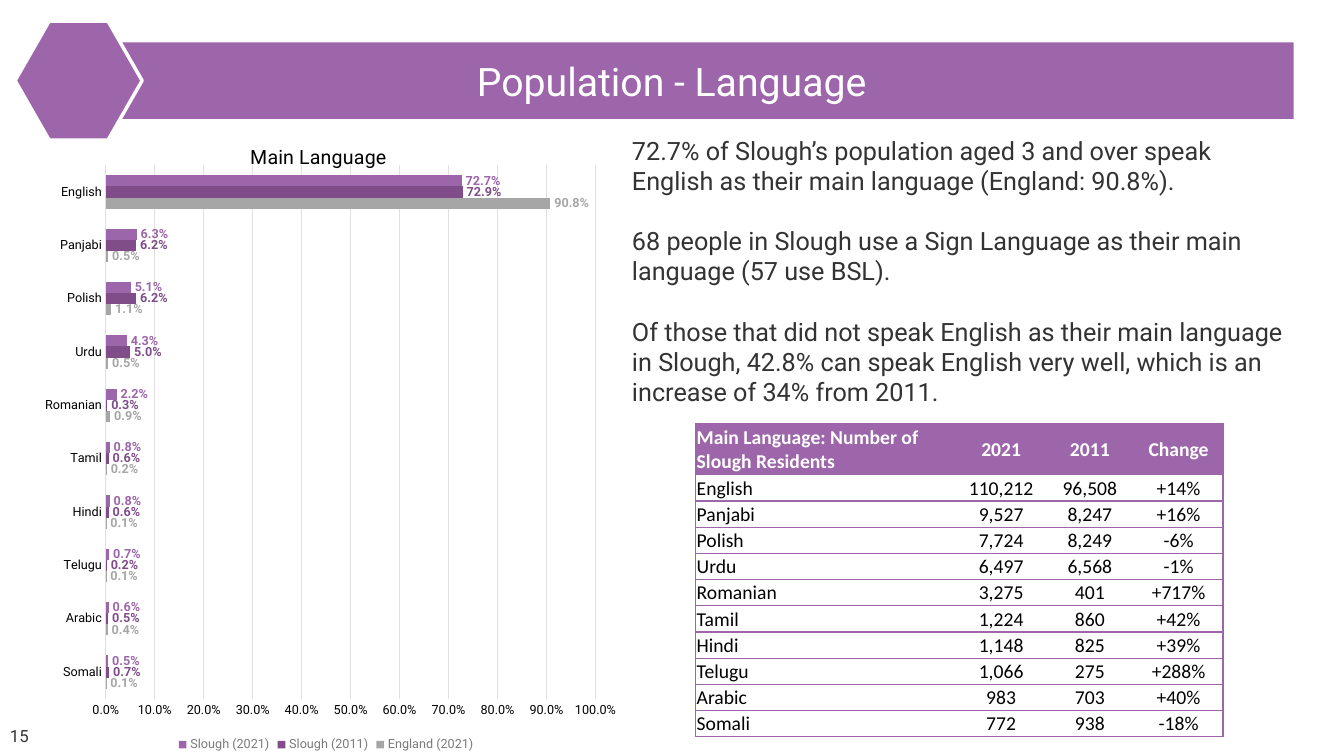
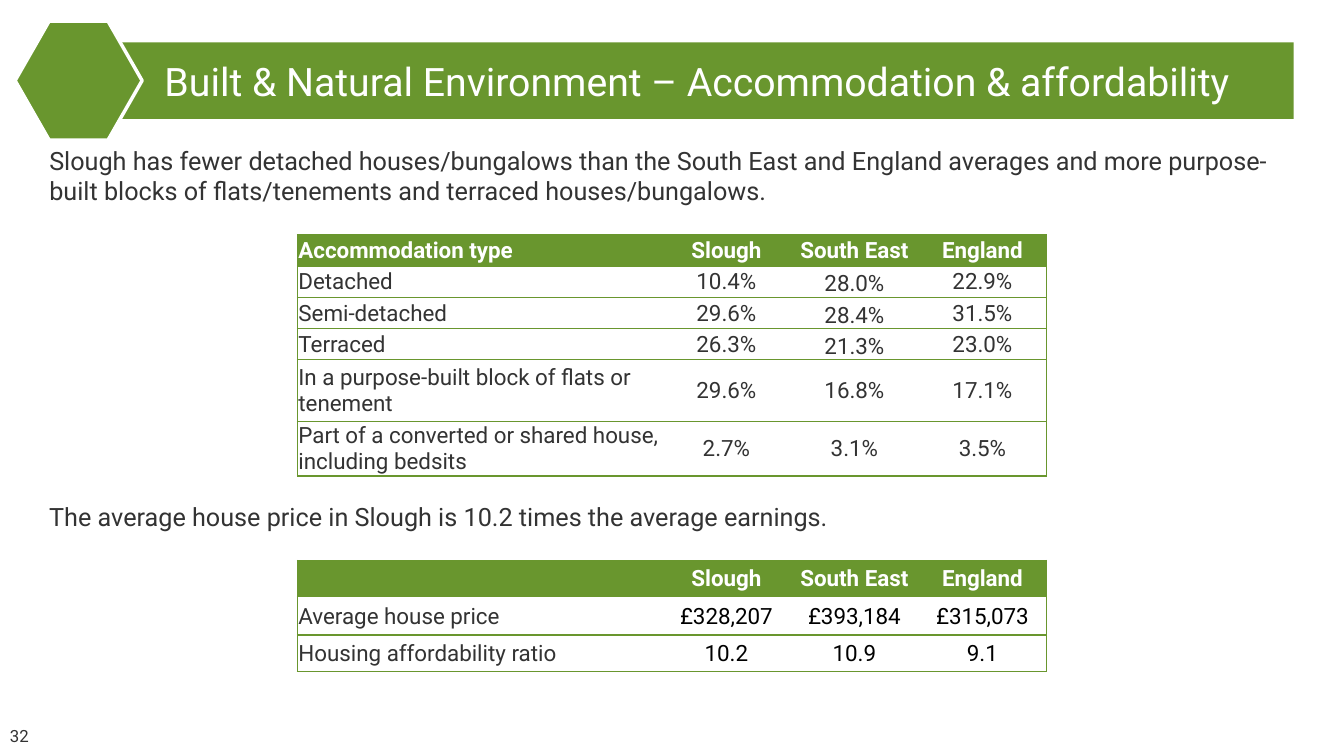
from pptx import Presentation
from pptx.chart.data import CategoryChartData
from pptx.dml.color import RGBColor
from pptx.enum import chart as charts, shapes, text
from pptx.oxml import parse_xml
from pptx.oxml.ns import nsdecls, qn
from pptx.util import Inches, Pt

PURPLE = RGBColor(0x9E, 0x66, 0xAA)
DARK_PURPLE = RGBColor(0x80, 0x4C, 0x8A)
GREEN = RGBColor(0x69, 0x96, 0x2E)
WHITE = RGBColor(0xFF, 0xFF, 0xFF)
BLACK = RGBColor(0, 0, 0)
INK = RGBColor(0x33, 0x33, 0x33)
LEGEND_GREY = RGBColor(0x7A, 0x7A, 0x7A)
BAR_GREY = RGBColor(0xA6, 0xA6, 0xA6)
GRID_GREY = RGBColor(0xE0, 0xE0, 0xE0)
FONT = "Roboto"
NO_STYLE = "{2D5ABB26-0587-4C30-8999-92F81FD0307C}"


def style(font, size, color, bold=False, name=FONT):
    font.name, font.size, font.bold = name, Pt(size), bold
    font.color.rgb = color


def add_grid(slide, box, widths, heights, rows, accent, font_name, size,
             label_color, value_color):
    table = slide.shapes.add_table(len(rows), len(widths), *map(Inches, box)).table
    table.horz_banding = table.first_row = False
    table._tbl.tblPr.find(qn("a:tableStyleId")).text = NO_STYLE
    for column, width in zip(table.columns, widths):
        column.width = Inches(width)
    for r, (values, height) in enumerate(zip(rows, heights)):
        table.rows[r].height = Inches(height)
        for c, value in enumerate(values):
            cell = table.cell(r, c)
            cell.margin_left = cell.margin_right = cell.margin_top = Inches(0.01)
            cell.margin_bottom = 0
            cell.vertical_anchor = text.MSO_ANCHOR.MIDDLE
            sides = "L" * (c == 0) + "R" * (c == len(widths) - 1) + "TB"
            for side in sides:
                cell._tc.get_or_add_tcPr().append(parse_xml(
                    f'<a:ln{side} {nsdecls("a")} w="12700"><a:solidFill>'
                    f'<a:srgbClr val="{accent}"/></a:solidFill></a:ln{side}>'))
            if r == 0:
                cell.fill.solid()
                cell.fill.fore_color.rgb = accent
            else:
                cell.fill.background()
            if value:
                paragraph = cell.text_frame.paragraphs[0]
                paragraph.alignment = text.PP_ALIGN.CENTER if c else text.PP_ALIGN.LEFT
                run = paragraph.add_run()
                run.text = value
                color = WHITE if r == 0 else value_color if c else label_color
                style(run.font, size, color, r == 0, font_name)
    return table


prs = Presentation()
prs.slide_width, prs.slide_height = Inches(13.33), Inches(7.5)

pages = [
    (PURPLE, 0.49, "Population - Language", "15", [
        ((6.17, 1.29, 6.7, 2.83), [
            "72.7% of Slough’s population aged 3 and over speak English as their main "
            "language (England: 90.8%).",
            "68 people in Slough use a Sign Language as their main language (57 use BSL).",
            "Of those that did not speak English as their main language in Slough, 42.8% "
            "can speak English very well, which is an increase of 34% from 2011."]),
    ]),
    (GREEN, 0.99, "Built & Natural Environment – Accommodation & affordability", "32", [
        ((0.39, 1.39, 12.45, 0.71), [
            "Slough has fewer detached houses/bungalows than the South East and England "
            "averages and more purpose-built blocks of flats/tenements and terraced "
            "houses/bungalows."]),
        ((0.39, 4.92, 12.34, 0.4), [
            "The average house price in Slough is 10.2 times the average earnings."]),
    ]),
]

slides = []
for accent, band_left, heading, number, passages in pages:
    slide = prs.slides.add_slide(prs.slide_layouts[5])
    slides.append(slide)

    band = slide.shapes.title
    band.left, band.top = Inches(band_left), Inches(0.42)
    band.width, band.height = Inches(12.83 - band_left), Inches(0.76)
    band.fill.solid()
    band.fill.fore_color.rgb = accent
    band.text_frame.auto_size = text.MSO_AUTO_SIZE.NONE
    band.text_frame.vertical_anchor = text.MSO_ANCHOR.MIDDLE
    paragraph = band.text_frame.paragraphs[0]
    paragraph.alignment = text.PP_ALIGN.CENTER
    run = paragraph.add_run()
    run.text = heading
    style(run.font, 28, WHITE)

    badge = slide.shapes.add_shape(shapes.MSO_SHAPE.HEXAGON, Inches(0.15), Inches(0.21),
                                   Inches(1.26), Inches(1.18))
    badge.shadow.inherit = False
    badge.adjustments[0] = 0.286
    badge.fill.solid()
    badge.fill.fore_color.rgb = accent
    badge.line.color.rgb = WHITE
    badge.line.width = Pt(2.5)

    page_number = ((0, 7.1, 3, 0.4), [number])
    for box, paragraphs in passages + [page_number]:
        is_number = paragraphs == [number]
        frame = slide.shapes.add_textbox(*map(Inches, box)).text_frame
        frame.word_wrap = True
        if is_number:
            frame.vertical_anchor = text.MSO_ANCHOR.MIDDLE
        for i, content in enumerate(paragraphs):
            paragraph = frame.add_paragraph() if i else frame.paragraphs[0]
            if i:
                paragraph.space_before = Pt(21.5)
            run = paragraph.add_run()
            run.text = content
            style(run.font, 12 if is_number else 18, INK)

language_slide, housing_slide = slides

languages = ["Somali", "Arabic", "Telugu", "Hindi", "Tamil", "Romanian", "Urdu",
             "Polish", "Panjabi", "English"]
shares = [
    ("England (2021)", BAR_GREY,
     [0.001, 0.004, 0.001, 0.001, 0.002, 0.009, 0.005, 0.011, 0.005, 0.908]),
    ("Slough (2011)", DARK_PURPLE,
     [0.007, 0.005, 0.002, 0.006, 0.006, 0.003, 0.05, 0.062, 0.062, 0.729]),
    ("Slough (2021)", PURPLE,
     [0.005, 0.006, 0.007, 0.008, 0.008, 0.022, 0.043, 0.051, 0.063, 0.727]),
]
share_data = CategoryChartData(number_format="0.0%")
share_data.categories = languages
for name, _, values in shares:
    share_data.add_series(name, values)
chart = language_slide.shapes.add_chart(
    charts.XL_CHART_TYPE.BAR_CLUSTERED, Inches(0.2), Inches(1.2), Inches(6.07),
    Inches(6.3), share_data).chart
style(chart.font, 10, INK)
chart_xml = chart._chartSpace.find(qn("c:chart"))
chart_xml.addnext(parse_xml(
    f'<c:spPr {nsdecls("c", "a")}><a:noFill/><a:ln><a:noFill/></a:ln></c:spPr>'))

chart.has_title = True
run = chart.chart_title.text_frame.paragraphs[0].add_run()
run.text = "Main Language"
style(run.font, 14, BLACK)

chart.has_legend = True
chart.legend.position = charts.XL_LEGEND_POSITION.BOTTOM
chart.legend.include_in_layout = False
style(chart.legend.font, 9, LEGEND_GREY)

plot = chart.plots[0]
plot.gap_width, plot.overlap = 182, 0
plot.vary_by_categories = False
for series, (_, color, _) in zip(plot.series, shares):
    series.format.fill.solid()
    series.format.fill.fore_color.rgb = color
    labels = series.data_labels
    labels.show_value = True
    labels.position = charts.XL_LABEL_POSITION.OUTSIDE_END
    labels.number_format = "0.0%"
    labels.number_format_is_linked = False
    style(labels.font, 9, color, True)

for axis in (chart.category_axis, chart.value_axis):
    axis.major_tick_mark = axis.minor_tick_mark = charts.XL_TICK_MARK.NONE
    style(axis.tick_labels.font, 9, BLACK)
chart.category_axis.format.line.color.rgb = GRID_GREY
chart.category_axis.format.line.width = Pt(0.75)
share_axis = chart.value_axis
share_axis.minimum_scale, share_axis.maximum_scale, share_axis.major_unit = 0, 1, 0.1
share_axis.format.line.fill.background()
share_axis.major_gridlines.format.line.color.rgb = GRID_GREY
share_axis.major_gridlines.format.line.width = Pt(0.75)
share_axis.tick_labels.number_format = "0.0%"
share_axis.tick_labels.number_format_is_linked = False

placements = [
    (chart_xml.find(qn("c:title")), 1, "", {"x": 0.37, "y": 0.03}),
    (chart_xml.find(qn("c:plotArea")), 0, '<c:layoutTarget val="inner"/>',
     {"x": 0.14, "y": 0.07, "w": 0.8, "h": 0.84}),
]
for part, position, target, edges in placements:
    for layout in part.findall(qn("c:layout")):
        part.remove(layout)
    sizes = "".join(f'<c:{edge} val="{value}"/>' for edge, value in edges.items())
    part.insert(position, parse_xml(
        f'<c:layout {nsdecls("c")}><c:manualLayout>{target}<c:xMode val="edge"/>'
        f'<c:yMode val="edge"/>{sizes}</c:manualLayout></c:layout>'))

residents = [
    ("Main Language: Number of Slough Residents", "2021", "2011", "Change"),
    ("English", "110,212", "96,508", "+14%"),
    ("Panjabi", "9,527", "8,247", "+16%"),
    ("Polish", "7,724", "8,249", "-6%"),
    ("Urdu", "6,497", "6,568", "-1%"),
    ("Romanian", "3,275", "401", "+717%"),
    ("Tamil", "1,224", "860", "+42%"),
    ("Hindi", "1,148", "825", "+39%"),
    ("Telugu", "1,066", "275", "+288%"),
    ("Arabic", "983", "703", "+40%"),
    ("Somali", "772", "938", "-18%"),
]
add_grid(language_slide, (6.9, 4.2, 5.23, 3.08), [2.59] + [0.88] * 3,
         [0.51] + [0.26] * 10, residents, PURPLE, "Calibri", 14, BLACK, BLACK)

areas = ("Slough", "South East", "England")
accommodation = [
    ("Accommodation type", *areas),
    ("Detached", "10.4%", "28.0%", "22.9%"),
    ("Semi-detached", "29.6%", "28.4%", "31.5%"),
    ("Terraced", "26.3%", "21.3%", "23.0%"),
    ("In a purpose-built block of flats or tenement", "29.6%", "16.8%", "17.1%"),
    ("Part of a converted or shared house, including bedsits", "2.7%", "3.1%", "3.5%"),
]
affordability = [
    ("", *areas),
    ("Average house price", "£328,207", "£393,184", "£315,073"),
    ("Housing affordability ratio", "10.2", "10.9", "9.1"),
]
housing_widths = [3.62] + [1.27] * 3
accommodation_table = add_grid(
    housing_slide, (2.95, 2.33, 7.43, 2.39), housing_widths, [0.31] * 4 + [0.61, 0.54],
    accommodation, GREEN, FONT, 16, INK, INK)
for r in range(1, 4):
    accommodation_table.cell(r, 2).vertical_anchor = text.MSO_ANCHOR.BOTTOM
add_grid(housing_slide, (2.95, 5.56, 7.43, 1.1), housing_widths, [0.36, 0.38, 0.36],
         affordability, GREEN, FONT, 16, INK, BLACK)

prs.save("out.pptx")
